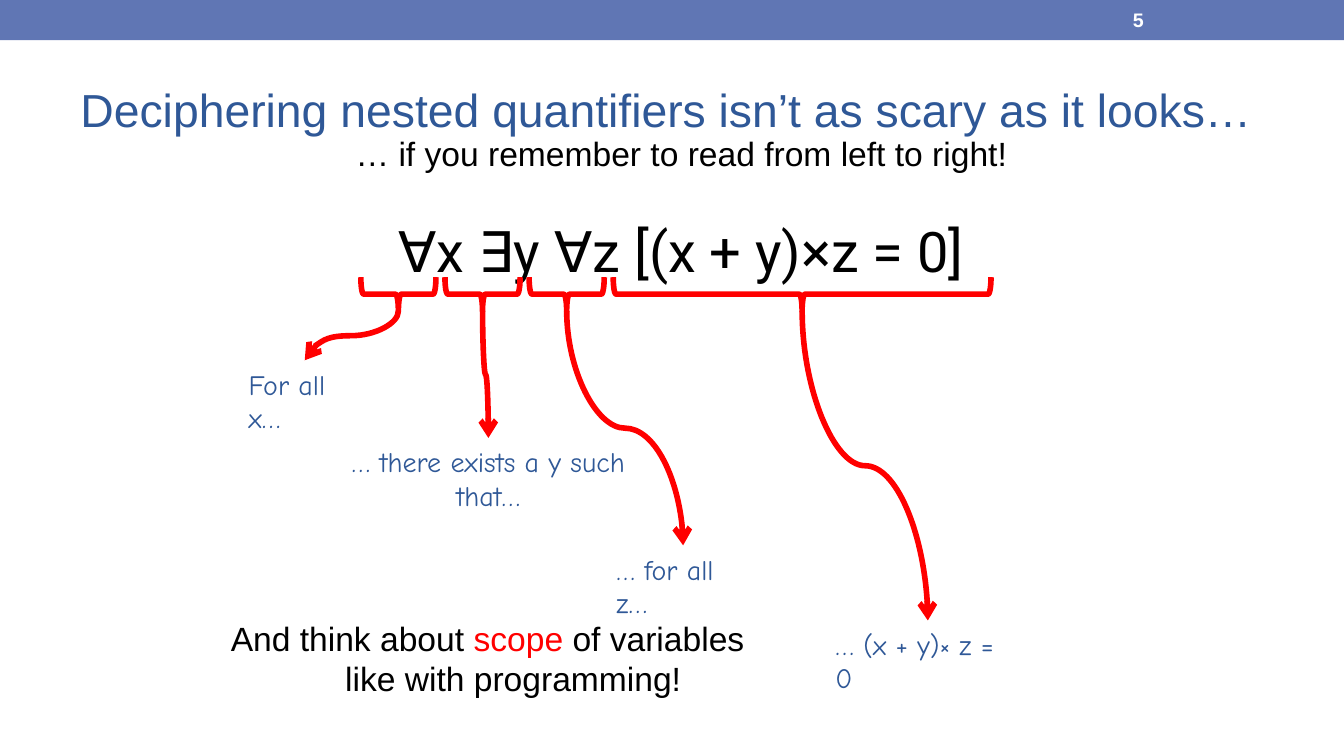
from dataclasses import dataclass

from lxml import etree
from pptx import Presentation
from pptx.dml.color import RGBColor
from pptx.enum import shapes, text
from pptx.oxml.ns import qn
from pptx.util import Cm, Pt


@dataclass(frozen=True)
class Theme:
    bar: str = "6076B4"
    heading: str = "2F5897"
    ink: str = "000000"
    accent: str = "FF0000"
    white: str = "FFFFFF"
    sans: str = "Arial"
    math: str = "Roboto"
    hand: str = "Comic Neue"
    title_size: float = 24.8
    formula_size: float = 30
    body_size: float = 18
    label_size: float = 15
    number_size: float = 10.5
    stroke: float = 3


class SlideBuilder:
    def __init__(self, page, theme):
        self.page = page
        self.theme = theme

    def bar(self, width, height):
        band = self.page.shapes.add_shape(
            shapes.MSO_SHAPE.RECTANGLE, 0, 0, Cm(width), Cm(height))
        band.shadow.inherit = False
        band.fill.solid()
        band.fill.fore_color.rgb = RGBColor.from_string(self.theme.bar)
        band.line.fill.background()

    def text(self, place, spans, font, size, align=text.PP_ALIGN.LEFT,
             anchor=text.MSO_ANCHOR.TOP, bold=False, inset=(0.25, 0.13),
             hanging=None, before=0, spacing=None):
        """Add one paragraph; spans are (wording, colour), hanging is (margin, indent)."""
        box = self.page.shapes.add_textbox(*map(Cm, place))
        frame = box.text_frame
        frame.word_wrap = True
        frame.vertical_anchor = anchor
        frame.margin_left = frame.margin_right = Cm(inset[0])
        frame.margin_top = frame.margin_bottom = Cm(inset[1])
        para = frame.paragraphs[0]
        para.alignment = align
        para.space_before = Pt(before)
        if spacing:
            para.line_spacing = spacing
        if hanging:
            properties = para._p.get_or_add_pPr()
            properties.set("marL", str(Cm(hanging[0])))
            properties.set("indent", str(Cm(hanging[1])))
        for wording, colour in spans:
            span = para.add_run()
            span.text = wording
            span.font.name = font
            span.font.size = Pt(size)
            span.font.bold = bold
            span.font.color.rgb = RGBColor.from_string(colour)

    def stroke(self, item):
        item.line.color.rgb = RGBColor.from_string(self.theme.accent)
        item.line.width = Pt(self.theme.stroke)

    def brace(self, centre, top, span, depth):
        """Add a brace below the formula, pointing down."""
        left = centre - depth / 2
        upper = top + depth / 2 - span / 2
        brace = self.page.shapes.add_shape(
            shapes.MSO_SHAPE.LEFT_BRACE, Cm(left), Cm(upper), Cm(depth), Cm(span))
        brace.rotation = 270
        brace.shadow.inherit = False
        brace.fill.background()
        self.stroke(brace)

    def arrow(self, label_x, label_y, brace_x, brace_y):
        """Add a curve leaving both ends vertically, its head at the label."""
        middle_x, middle_y = (label_x + brace_x) / 2, (label_y + brace_y) / 2
        half_length, half_shift = (label_y - brace_y) / 2, (label_x - brace_x) / 2
        arrow = self.page.shapes.add_connector(
            shapes.MSO_CONNECTOR.CURVE,
            Cm(middle_x - half_length), Cm(middle_y + half_shift),
            Cm(middle_x + half_length), Cm(middle_y - half_shift))
        self.stroke(arrow)
        properties = arrow._element.spPr
        properties.find(qn("a:xfrm")).set("rot", str(270 * 60000))
        etree.SubElement(properties.find(qn("a:ln")), qn("a:headEnd"), type="arrow")
        etree.SubElement(properties, qn("a:effectLst"))


def main():
    deck = Presentation()
    deck.slide_width, deck.slide_height = Cm(25.4), Cm(14.29)
    theme = Theme()
    slide = SlideBuilder(deck.slides.add_slide(deck.slide_layouts[6]), theme)
    centre, middle = text.PP_ALIGN.CENTER, text.MSO_ANCHOR.MIDDLE

    slide.bar(25.4, 0.76)
    slide.text((21.16, 0.03, 2.97, 0.69), [("5", theme.white)],
               theme.sans, theme.number_size, anchor=middle, bold=True)
    slide.text((1.27, 1.12, 22.86, 2.06),
               [("Deciphering nested quantifiers isn’t as scary as it looks…", theme.heading)],
               theme.sans, theme.title_size, anchor=middle, spacing=0.8)
    slide.text((4.6, 2.39, 16.2, 1.42),
               [("… if you remember to read from left to right!", theme.ink)],
               theme.sans, theme.body_size, centre, hanging=(1.27, -0.91), before=3.6)
    slide.text((4.78, 3.96, 16.2, 1.75), [("∀x ∃y ∀z [(x + y)×z = 0]", theme.ink)],
               theme.math, theme.formula_size, centre)

    # Brace span, then the reading of that part and its place
    readings = [
        (1.42, "For all x…", (4.45, 6.81, 2.62, 0.89), text.PP_ALIGN.LEFT),
        (1.42, "… there exists a y such that…", (6.07, 8.28, 6.32, 1.55), centre),
        (1.42, "… for all z…", (11.4, 10.31, 3.02, 0.89), text.PP_ALIGN.LEFT),
        (7.14, "… (x + y)× z = 0", (15.54, 11.73, 3.99, 0.89), text.PP_ALIGN.LEFT),
    ]
    brace_left, brace_top, brace_depth, brace_gap = 6.82, 5.24, 0.64, 0.17
    for span, wording, place, align in readings:
        tip = brace_left + span / 2
        slide.brace(tip, brace_top, span, brace_depth)
        slide.text(place, [(wording, theme.heading)], theme.hand, theme.label_size, align)
        left, top, width, _ = place
        slide.arrow(left + width / 2, top, tip, brace_top + brace_depth)
        brace_left += span + brace_gap

    slide.text((4.06, 11.58, 10.31, 1.9),
               [("And think about ", theme.ink), ("scope", theme.accent),
                (" of variables like with programming!", theme.ink)],
               theme.sans, theme.body_size, centre, inset=(0.18, 0.1),
               hanging=(0.97, -0.97), before=3.6)
    deck.save("out.pptx")


if __name__ == "__main__":
    main()
